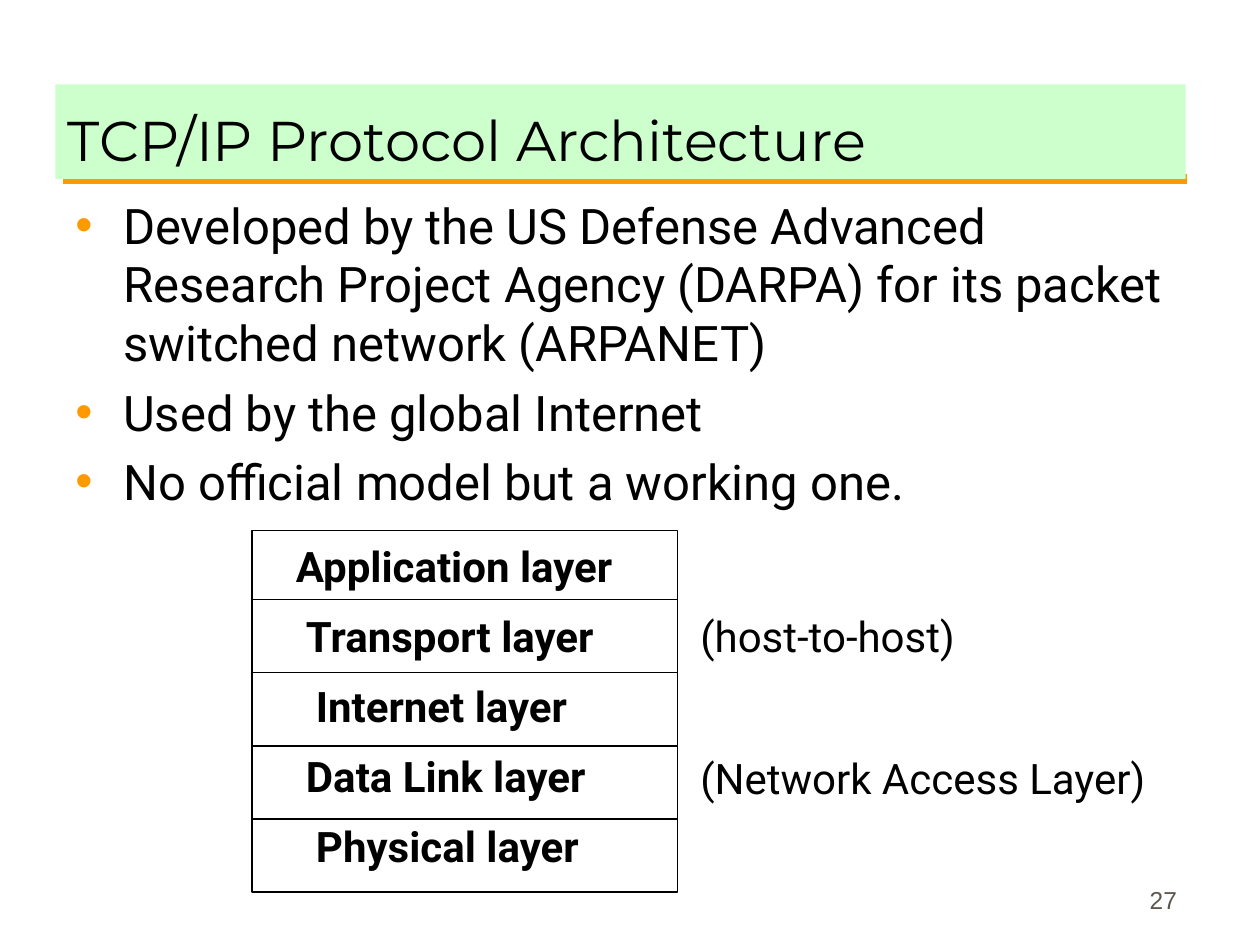
from lxml import etree
from pptx import Presentation
from pptx.dml.color import RGBColor
from pptx.enum import shapes, text
from pptx.oxml import ns
from pptx.util import Inches, Pt

BLACK = RGBColor(0x00, 0x00, 0x00)
GREEN = RGBColor(0xCC, 0xFF, 0xCC)
ORANGE = RGBColor(0xFF, 0x99, 0x00)
GREY = RGBColor(0x5E, 0x57, 0x4E)

TITLE = "TCP/IP Protocol Architecture"
POINTS = [
    "Developed by the US Defense Advanced Research Project Agency (DARPA) "
    "for its packet switched network (ARPANET)",
    "Used by the global Internet",
    "No official model but a working one.",
]
# Layer name, left indent, line spacing
LAYERS = [
    ("Application layer", 1.75, 1.4),
    ("Transport layer", 1.83, 1.2),
    ("Internet layer", 1.91, 1.2),
    ("Data Link layer", 1.83, 1.2),
    ("Physical layer", 1.91, 1.2),
]
# Note, left, top, width, height
NOTES = [
    ("(host-to-host)", 5.46, 4.8, 2.24, 0.5),
    ("(Network Access Layer)", 5.46, 5.92, 4.04, 0.57),
]
PAGE = "27"

STACK_LEFT, STACK_TOP, STACK_WIDTH, STACK_HEIGHT = 2, 4.21, 3.38, 2.87
LAYER_PITCH = 0.58


def write(paragraph, words, size, font="Roboto", color=BLACK, bold=False,
          align=text.PP_ALIGN.LEFT, before=0, spacing=1.0, indent=0, bullet=None):
    paragraph.alignment = align
    paragraph.line_spacing = spacing
    paragraph.space_before = Pt(before)
    run = paragraph.add_run()
    run.text = words
    run.font.size, run.font.name, run.font.bold = Pt(size), font, bold
    run.font.color.rgb = color
    props = paragraph._p.get_or_add_pPr()
    props.set("marL", str(Inches(indent)))
    if bullet:
        props.set("indent", str(-Inches(indent)))
        bullet_color = etree.SubElement(props, ns.qn("a:buClr"))
        etree.SubElement(bullet_color, ns.qn("a:srgbClr"), val=str(ORANGE))
        etree.SubElement(props, ns.qn("a:buFont"), typeface="Arial")
        etree.SubElement(props, ns.qn("a:buChar"), char=bullet)


def add_frame(slide, left, top, width, height, wrap=True, anchor=text.MSO_ANCHOR.TOP):
    box = slide.shapes.add_textbox(*map(Inches, (left, top, width, height)))
    box.text_frame.word_wrap = wrap
    box.text_frame.vertical_anchor = anchor
    return box.text_frame


def add_rectangle(slide, left, top, width, height):
    rectangle = slide.shapes.add_shape(
        shapes.MSO_SHAPE.RECTANGLE, *map(Inches, (left, top, width, height)))
    rectangle.shadow.inherit = False
    return rectangle


def add_rule(slide, left, right, y, color, weight):
    rule = slide.shapes.add_connector(
        shapes.MSO_CONNECTOR.STRAIGHT, *map(Inches, (left, y, right, y)))
    rule.line.color.rgb, rule.line.width = color, Pt(weight)
    etree.SubElement(rule._element.spPr, ns.qn("a:effectLst"))


def main():
    deck = Presentation()
    deck.slide_width, deck.slide_height = Inches(10), Inches(7.5)
    slide = deck.slides.add_slide(deck.slide_layouts[6])

    # Title band over its orange rule
    add_rule(slide, 0.5, 9.42, 1.42, ORANGE, 6)
    band = add_rectangle(slide, 0.44, 0.67, 8.97, 0.75)
    band.fill.solid()
    band.fill.fore_color.rgb = GREEN
    band.line.fill.background()
    band.text_frame.word_wrap = True
    band.text_frame.vertical_anchor = text.MSO_ANCHOR.BOTTOM
    write(band.text_frame.paragraphs[0], TITLE, 32, font="Montserrat")

    # Bullet points, followed by the layer names
    body = add_frame(slide, 0.5, 1.5, 8.94, 5.67)
    for i, point in enumerate(POINTS):
        paragraph = body.add_paragraph() if i else body.paragraphs[0]
        write(paragraph, point, 28, before=6 if i else 0, indent=0.38, bullet="•")
    for name, indent, spacing in LAYERS:
        write(body.add_paragraph(), name, 24, bold=True, before=5.5,
              spacing=spacing, indent=indent)

    # Layer stack: outline and dividers, spaced up from the bottom
    stack = add_rectangle(slide, STACK_LEFT, STACK_TOP, STACK_WIDTH, STACK_HEIGHT)
    stack.fill.background()
    stack.line.color.rgb, stack.line.width = BLACK, Pt(0.75)
    for i in range(1, len(LAYERS)):
        add_rule(slide, STACK_LEFT, STACK_LEFT + STACK_WIDTH,
                 STACK_TOP + STACK_HEIGHT - i * LAYER_PITCH, BLACK, 0.75)

    # Notes beside the stack
    for note, *place in NOTES:
        write(add_frame(slide, *place, wrap=False).paragraphs[0], note, 24)

    # Page number
    footer = add_frame(slide, 7.36, 6.81, 2.08, 0.5, anchor=text.MSO_ANCHOR.BOTTOM)
    write(footer.paragraphs[0], PAGE, 14, font="Arial", color=GREY,
          align=text.PP_ALIGN.RIGHT)

    deck.save("out.pptx")


if __name__ == "__main__":
    main()
